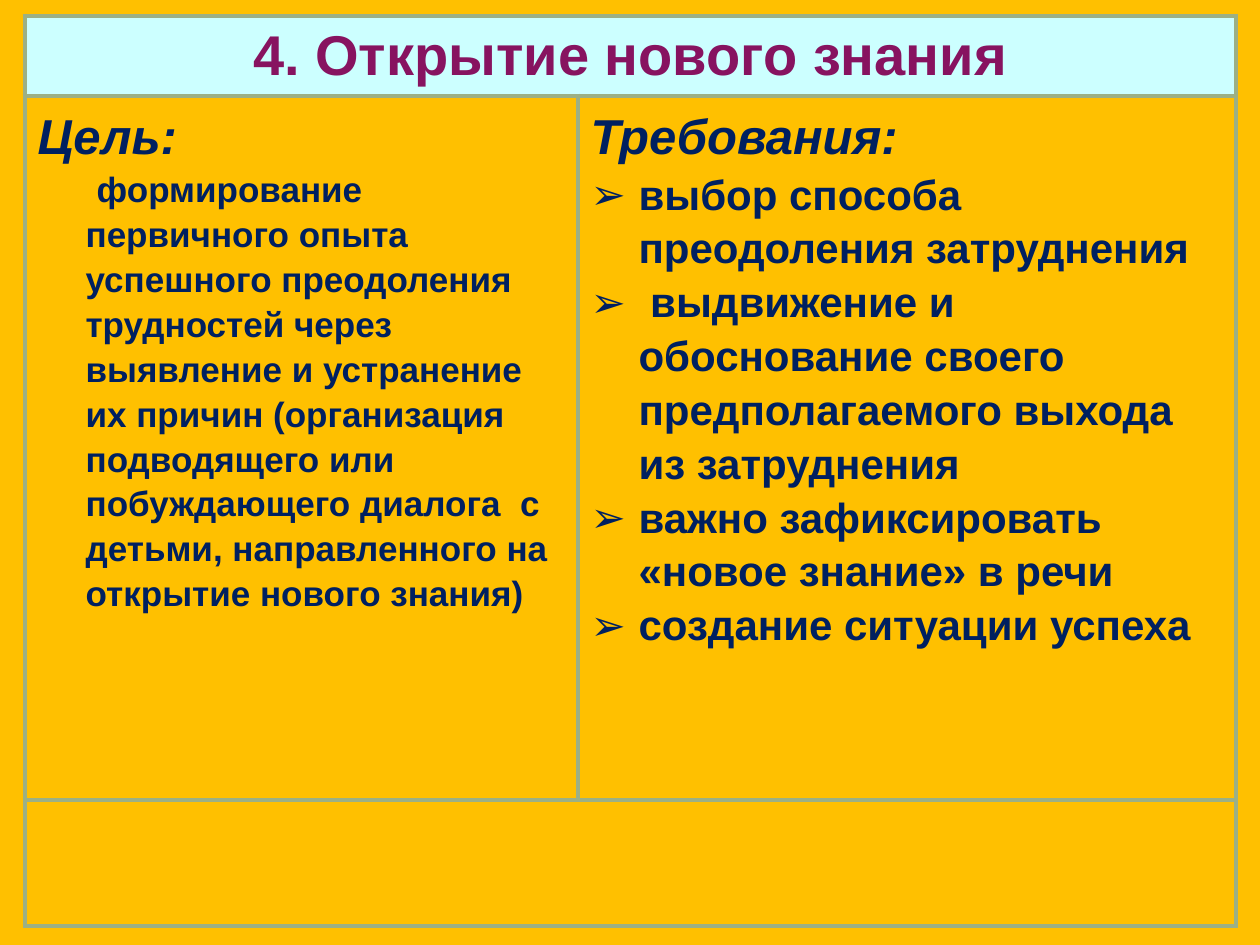
"""Build a slide with a framed table on the discovery of new knowledge."""
from lxml import etree
from pptx import Presentation
from pptx.dml.color import RGBColor
from pptx.enum.text import MSO_ANCHOR, PP_ALIGN
from pptx.oxml.ns import qn

CENTER = PP_ALIGN.CENTER
MIDDLE = MSO_ANCHOR.MIDDLE
SCALE = 914400 / 126
POINT = 12700
FONT = "Arial"
HUES = {"page": "FFC000", "head": "CCFFFF", "title": "871360",
        "text": "002060", "line": "9CB084"}
COLS = [553, 658]
ROWS = [80, 704, 126]
INDENT = 48
TITLE = "4. Открытие нового знания"
GOAL = ("формирование первичного опыта успешного преодоления трудностей через "
        "выявление и устранение их причин (организация подводящего или "
        "побуждающего диалога  с детьми, направленного на открытие нового знания)")
NEEDS = ["выбор способа преодоления затруднения",
         " выдвижение и обоснование своего предполагаемого выхода из затруднения",
         "важно зафиксировать «новое знание» в речи",
         "создание ситуации успеха"]


def px(size):
    """Turn pixels into EMU."""
    return round(size * SCALE)


def tint(fill, hue):
    """Give a fill one solid colour."""
    fill.solid()
    fill.fore_color.rgb = RGBColor.from_string(HUES[hue])


def style(para, size, hue="text", slant=False):
    """Format the runs of a paragraph."""
    for run in para.runs:
        font = run.font
        font.name, font.size = FONT, size * POINT
        font.bold, font.italic = True, slant
        font.color.rgb = RGBColor.from_string(HUES[hue])


def frame(cell):
    """Draw the four borders of a cell."""
    props = cell._tc.get_or_add_tcPr()
    for side in ("lnL", "lnR", "lnT", "lnB"):
        line = etree.SubElement(props, qn("a:" + side), w=str(3 * POINT))
        fill = etree.SubElement(line, qn("a:solidFill"))
        etree.SubElement(fill, qn("a:srgbClr"), val=HUES["line"])


def write(para, text, size, left=INDENT, first=-INDENT, mark=None, slant=False):
    """Fill a paragraph with text, indents and perhaps a bullet."""
    para.text = text
    para.line_spacing = 1.15
    style(para, size, slant=slant)
    props = para._p.get_or_add_pPr()
    props.set("marL", str(px(left)))
    props.set("indent", str(px(first)))
    if mark:
        etree.SubElement(props, qn("a:buFont"), typeface=FONT)
        etree.SubElement(props, qn("a:buChar"), char=mark)
    else:
        etree.SubElement(props, qn("a:buNone"))


def add_grid(slide):
    """Add the plain table with its merged rows."""
    shape = slide.shapes.add_table(len(ROWS), len(COLS), px(25), px(16),
                                   px(sum(COLS)), px(sum(ROWS)))
    table = shape.table
    table.first_row = table.horz_banding = False
    for col, width in zip(table.columns, COLS):
        col.width = px(width)
    for row, height in zip(table.rows, ROWS):
        row.height = px(height)
    for cell in table.iter_cells():
        frame(cell)
        cell.fill.background()
    for row in (0, 2):
        table.cell(row, 0).merge(table.cell(row, 1))
    return table


def fill_head(cell):
    """Write the title row."""
    tint(cell.fill, "head")
    cell.vertical_anchor = MIDDLE
    para = cell.text_frame.paragraphs[0]
    para.text = TITLE
    para.alignment = CENTER
    style(para, 32, "title")


def fill_list(cell, head, items, size, **look):
    """Write a heading and the items below it."""
    body = cell.text_frame
    write(body.paragraphs[0], head, 28, slant=True)
    for item in items:
        write(body.add_paragraph(), item, size, **look)


def main():
    """Build and save the slide."""
    deck = Presentation()
    deck.slide_width, deck.slide_height = px(1260), px(945)
    slide = deck.slides.add_slide(deck.slide_layouts[6])
    tint(slide.background.fill, "page")
    table = add_grid(slide)
    fill_head(table.cell(0, 0))
    fill_list(table.cell(1, 0), "Цель:", [GOAL], 20, first=11)
    fill_list(table.cell(1, 1), "Требования:", NEEDS, 24, mark="➢")
    deck.save("out.pptx")


if __name__ == "__main__":
    main()
